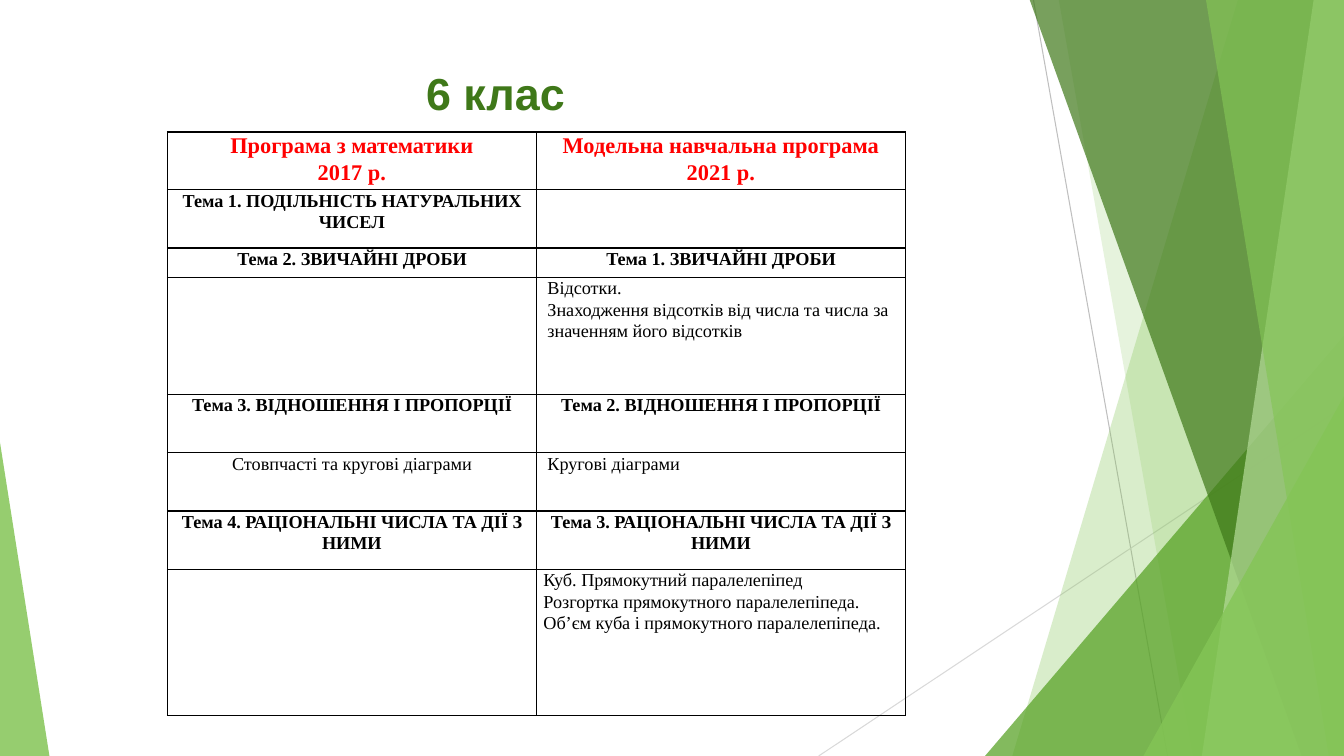
from lxml.etree import SubElement
from pptx import Presentation
from pptx.dml.color import RGBColor
from pptx.enum.shapes import MSO_CONNECTOR, MSO_SHAPE
from pptx.enum.text import PP_ALIGN
from pptx.oxml.ns import qn
from pptx.util import Emu, Inches, Pt

COLORS = {"lime": "84C556", "green": "54A021", "dark": "3F7819", "pale": "B5DC9A",
          "gray": "BFBFBF", "silver": "D9D9D9", "red": "FF0000", "black": "000000"}
WIDTH, HEIGHT, BLEED = 13.33, 7.5, -0.01

TITLE = "6 клас"
# Cell styles: size, bold, colour, alignment, left indent
STYLES = {
    "head": (16, True, "red", PP_ALIGN.CENTER, 0),
    "topic": (13, True, "black", PP_ALIGN.CENTER, 0),
    "middle": (13, False, "black", PP_ALIGN.CENTER, 0),
    "indent": (13, False, "black", PP_ALIGN.LEFT, 0.04),
    "plain": (13, False, "black", PP_ALIGN.LEFT, 0),
}
EMPTY = ("plain", "")
# Row height, then style and text of each cell
ROWS = [
    (0.57, ("head", "Програма з математики\n2017 р."),
     ("head", "Модельна навчальна програма\n2021 р.")),
    (0.58, ("topic", "Тема 1. ПОДІЛЬНІСТЬ НАТУРАЛЬНИХ ЧИСЕЛ"), EMPTY),
    (0.29, ("topic", "Тема 2. ЗВИЧАЙНІ ДРОБИ"), ("topic", "Тема 1. ЗВИЧАЙНІ ДРОБИ")),
    (1.16, EMPTY, ("indent", "Відсотки.\nЗнаходження відсотків від числа та числа "
                             "за значенням його відсотків")),
    (0.58, ("topic", "Тема 3. ВІДНОШЕННЯ І ПРОПОРЦІЇ"),
     ("topic", "Тема 2. ВІДНОШЕННЯ І ПРОПОРЦІЇ")),
    (0.58, ("middle", "Стовпчасті та кругові діаграми"), ("indent", "Кругові діаграми")),
    (0.58, ("topic", "Тема 4. РАЦІОНАЛЬНІ ЧИСЛА ТА ДІЇ З НИМИ"),
     ("topic", "Тема 3. РАЦІОНАЛЬНІ ЧИСЛА ТА ДІЇ З НИМИ")),
    (1.45, EMPTY, ("plain", "Куб. Прямокутний паралелепіпед\nРозгортка прямокутного "
                            "паралелепіпеда. Об’єм куба і прямокутного паралелепіпеда.")),
]
TABLE_LEFT, TABLE_TOP, COLUMN_WIDTH = 1.66, 1.31, 3.66

# Thin lines: start, end, colour
LINES = [((10.25, 0), (11.58, HEIGHT), "gray"), ((WIDTH, 4.03), (8.12, HEIGHT), "silver")]
# Wedges run to the right edge: left x at top, left x at bottom, colour, opacity
# Triangles stand on the bottom edge: left, top, width, apex, colour, opacity
FACETS = [
    (12.28, 10.04, "lime", 30),
    (10.5, 11.83, "lime", 20),
    (9.77, 3.33, 3.56, 1, "green", 72),
    (10.21, 12.91, "dark", 70),
    (13.03, 11.92, "pale", 70),
    (11.96, 13.18, "lime", 65),
    (11.34, 3.93, 1.99, 1, "lime", 80),
    (0, 4.39, 0.49, 0, "lime", 85),
]


def rgb(name):
    return RGBColor.from_string(COLORS[name])


def style_paragraph(para, size, bold, color, align, font):
    para.alignment = align
    para.line_spacing = 1.07
    for span in para.runs:
        span.font.size = Pt(size)
        span.font.bold = bold
        span.font.name = font
        span.font.color.rgb = rgb(color)


def add_line(page, start, end, color):
    line = page.shapes.add_connector(MSO_CONNECTOR.STRAIGHT,
                                     *[Inches(value) for value in start + end])
    line.line.color.rgb = rgb(color)
    line.line.width = Pt(0.75)
    SubElement(line._element.spPr, qn("a:effectLst"))


def add_wedge(page, top_x, bottom_x):
    corners = [(top_x, BLEED), (WIDTH, BLEED), (WIDTH, HEIGHT), (bottom_x, HEIGHT)]
    points = [(Inches(x), Inches(y)) for x, y in corners]
    builder = page.shapes.build_freeform(*points[0])
    builder.add_line_segments(points[1:], close=True)
    return builder.convert_to_shape()


def add_triangle(page, left, top, width, apex):
    shape = page.shapes.add_shape(MSO_SHAPE.ISOSCELES_TRIANGLE, Inches(left), Inches(top),
                                  Inches(width), Inches(HEIGHT - top))
    shape.adjustments[0] = apex
    return shape


def add_facet(page, *geometry, color, opacity):
    build = add_wedge if len(geometry) == 2 else add_triangle
    shape = build(page, *geometry)
    shape.shadow.inherit = False
    shape.line.fill.background()
    shape.fill.solid()
    shape.fill.fore_color.rgb = rgb(color)
    tint = shape._element.spPr.find(qn("a:solidFill"))[0]
    SubElement(tint, qn("a:alpha"), val=str(opacity * 1000))


def add_title(page):
    box = page.shapes.add_textbox(Inches(4.12), Inches(0.57), Inches(1.59), Inches(0.65))
    box.text_frame.word_wrap = False
    box.text_frame.text = TITLE
    para = box.text_frame.paragraphs[0]
    style_paragraph(para, 32, True, "dark", PP_ALIGN.CENTER, "Arial")
    para.space_after = Pt(8)


def fill_cell(cell, style, text):
    size, bold, color, align, indent = STYLES[style]
    cell.margin_left = cell.margin_right = Inches(0.07)
    cell.margin_top = cell.margin_bottom = Emu(0)
    cell.text_frame.text = text
    for para in cell.text_frame.paragraphs:
        style_paragraph(para, size, bold, color, align, "Times New Roman")
        if indent:
            properties = para._p.get_or_add_pPr()
            properties.set("marL", str(Inches(indent)))
            properties.set("indent", "0")
    # Black borders, no fill
    properties = cell._tc.get_or_add_tcPr()
    for side in ("L", "R", "T", "B"):
        border = SubElement(properties, qn(f"a:ln{side}"), w=str(Pt(1)))
        fill = SubElement(border, qn("a:solidFill"))
        SubElement(fill, qn("a:srgbClr"), val=COLORS["black"])
    cell.fill.background()


def add_programme_table(page):
    total = sum(row[0] for row in ROWS)
    table = page.shapes.add_table(len(ROWS), 2, Inches(TABLE_LEFT), Inches(TABLE_TOP),
                                  Inches(2 * COLUMN_WIDTH), Inches(total)).table
    table.first_row = table.horz_banding = False
    for column in table.columns:
        column.width = Inches(COLUMN_WIDTH)
    for row_index, (height, *cells) in enumerate(ROWS):
        table.rows[row_index].height = Inches(height)
        for column_index, (style, text) in enumerate(cells):
            fill_cell(table.cell(row_index, column_index), style, text)


def main():
    deck = Presentation()
    deck.slide_width, deck.slide_height = Inches(WIDTH), Inches(HEIGHT)
    page = deck.slides.add_slide(deck.slide_layouts[6])
    # Background decoration
    for start, end, color in LINES:
        add_line(page, start, end, color)
    for *geometry, color, opacity in FACETS:
        add_facet(page, *geometry, color=color, opacity=opacity)
    # Content
    add_title(page)
    add_programme_table(page)
    deck.save("out.pptx")


if __name__ == "__main__":
    main()
